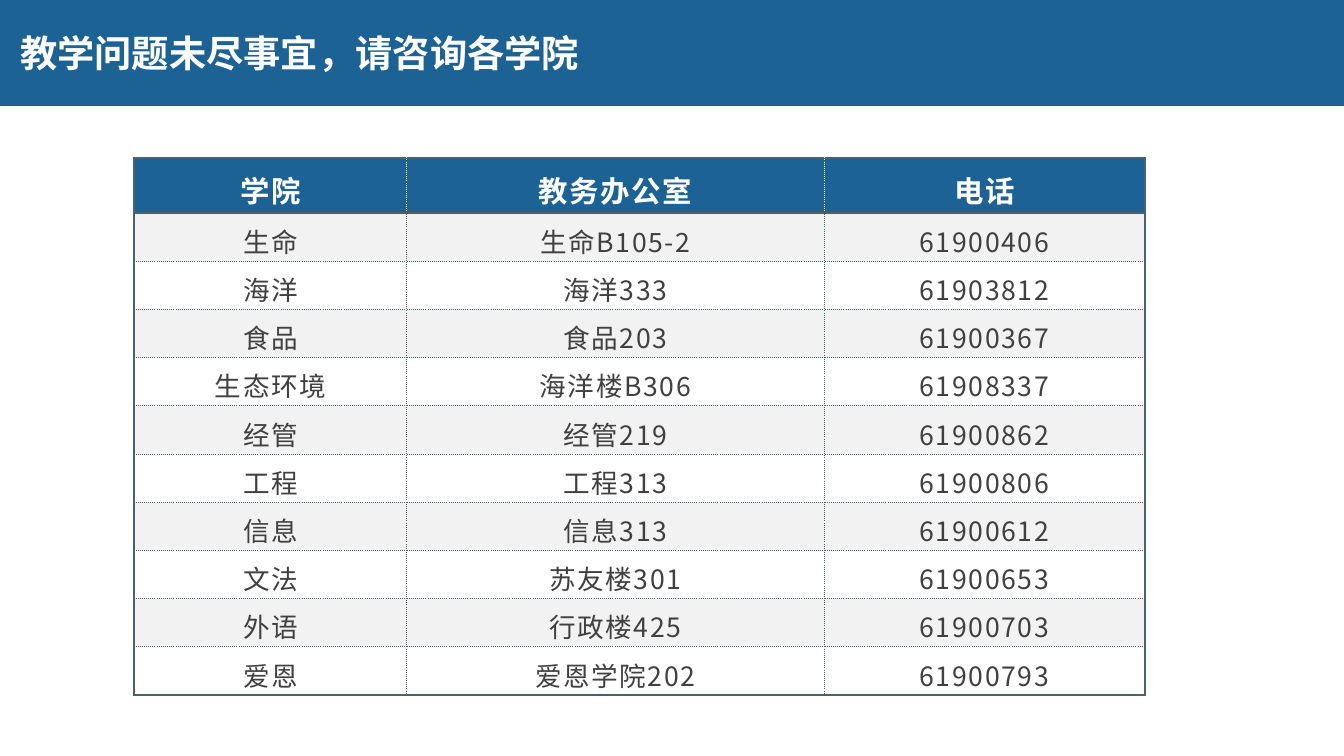
from dataclasses import dataclass

from lxml.etree import SubElement
from pptx import Presentation
from pptx.dml.color import RGBColor as RGB
from pptx.enum.text import MSO_ANCHOR as Anchor, MSO_AUTO_SIZE as AutoSize, PP_ALIGN as Align
from pptx.oxml.ns import qn
from pptx.util import Inches, Pt

TITLE = "教学问题未尽事宜，请咨询各学院"
HEADER = ("学院", "教务办公室", "电话")
OFFICES = [
    ("生命", "生命B105-2", "61900406"),
    ("海洋", "海洋333", "61903812"),
    ("食品", "食品203", "61900367"),
    ("生态环境", "海洋楼B306", "61908337"),
    ("经管", "经管219", "61900862"),
    ("工程", "工程313", "61900806"),
    ("信息", "信息313", "61900612"),
    ("文法", "苏友楼301", "61900653"),
    ("外语", "行政楼425", "61900703"),
    ("爱恩", "爱恩学院202", "61900793"),
]


@dataclass(frozen=True)
class Theme:
    font: str = "Noto Sans CJK SC"
    blue: str = "1D6294"
    line: str = "4A626E"
    white: str = "FFFFFF"
    band: str = "F2F2F2"
    ink: str = "404040"
    title_pt: float = 26.6
    header_pt: float = 21
    body_pt: float = 19
    spacing: int = 120
    thick: float = 1.5
    thin: float = 0.25


T = Theme()
SLIDE_W, SLIDE_H = 13.33, 7.5
BANNER_H = SLIDE_H * 0.14
LEFT, TOP = SLIDE_W * 0.1, 1.57
COLS = (2.7, 4.14, 3.18)
HEAD_H, TABLE_H = 0.54, 5.3
ROW_H = (TABLE_H - HEAD_H) / len(OFFICES)


def set_margins(item, side, edge):
    item.margin_left = item.margin_right = Inches(side)
    item.margin_top = item.margin_bottom = Inches(edge)


def style_run(r, size, color, bold):
    r.font.size = Pt(size)
    r.font.bold = bold
    r.font.color.rgb = RGB.from_string(color)
    r.font.name = T.font
    SubElement(r.font._element, qn("a:ea"), typeface=T.font)


def add_border(cell, side, color, width):
    ln = SubElement(cell._tc.get_or_add_tcPr(), qn(f"a:ln{side}"), w=str(Pt(width)))
    fill = SubElement(ln, qn("a:solidFill"))
    SubElement(fill, qn("a:srgbClr"), val=color)
    SubElement(ln, qn("a:prstDash"), val="solid" if width == T.thick else "sysDot")


def style_cell(cell, row, col):
    head = row == 0
    outer = {
        "L": col == 0,
        "R": col == len(COLS) - 1,
        "T": row <= 1,
        "B": head or row == len(OFFICES),
    }
    for side, thick in outer.items():
        color = T.white if head and not thick else T.line
        add_border(cell, side, color, T.thick if thick else T.thin)
    cell.fill.solid()
    shade = T.blue if head else T.band if row % 2 else T.white
    cell.fill.fore_color.rgb = RGB.from_string(shade)
    cell.vertical_anchor = Anchor.MIDDLE
    set_margins(cell, 0.26, 0.01)
    p = cell.text_frame.paragraphs[0]
    p.alignment = Align.CENTER
    p.line_spacing = 1.2
    r = p.runs[0]
    style_run(r, T.header_pt if head else T.body_pt, T.white if head else T.ink, head)
    r.font._element.set("spc", str(T.spacing))


def add_title(s):
    sp = s.shapes.title
    sp.left, sp.top, sp.width, sp.height = 0, 0, Inches(SLIDE_W), Inches(BANNER_H)
    sp.fill.solid()
    sp.fill.fore_color.rgb = RGB.from_string(T.blue)
    tf = sp.text_frame
    tf.text = TITLE
    tf.word_wrap = True
    tf.auto_size = AutoSize.NONE
    tf.vertical_anchor = Anchor.MIDDLE
    set_margins(tf, 0.2, 0.05)
    p = tf.paragraphs[0]
    p.alignment = Align.LEFT
    style_run(p.runs[0], T.title_pt, T.white, True)


def add_offices(s):
    rows = [HEADER, *OFFICES]
    table = s.shapes.add_table(
        len(rows), len(COLS), Inches(LEFT), Inches(TOP), Inches(sum(COLS)), Inches(TABLE_H)
    ).table
    table.horz_banding = False
    for column, width in zip(table.columns, COLS):
        column.width = Inches(width)
    for i, values in enumerate(rows):
        table.rows[i].height = Inches(ROW_H if i else HEAD_H)
        for j, value in enumerate(values):
            cell = table.cell(i, j)
            cell.text_frame.text = value
            style_cell(cell, i, j)


def main():
    prs = Presentation()
    prs.slide_width, prs.slide_height = Inches(SLIDE_W), Inches(SLIDE_H)
    s = prs.slides.add_slide(prs.slide_layouts[5])
    add_title(s)
    add_offices(s)
    prs.save("out.pptx")


if __name__ == "__main__":
    main()
